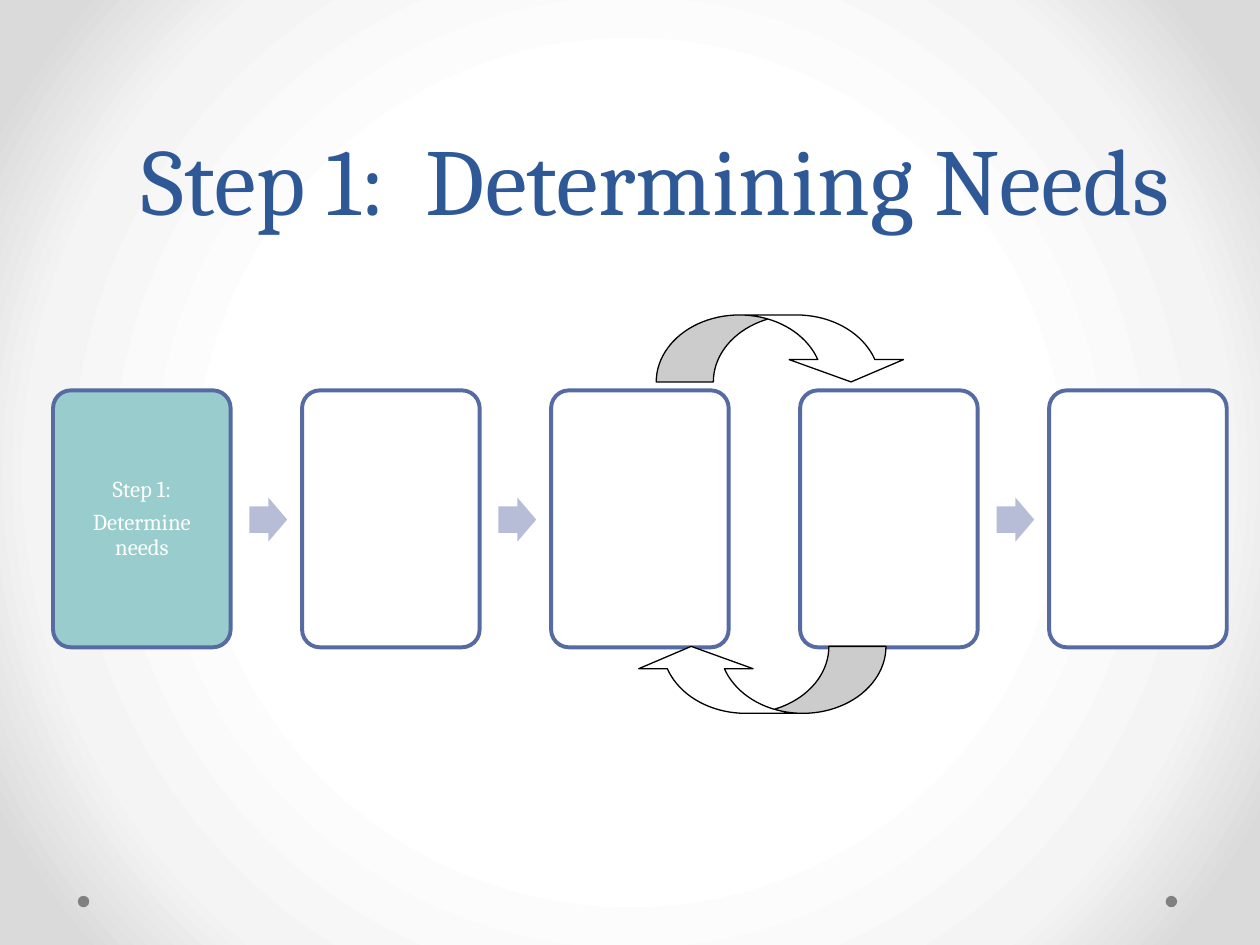
"""Build the Step 1 slide: a five-box process with a loop between boxes three and four."""
from dataclasses import dataclass

from pptx import Presentation
from pptx.dml.color import RGBColor
from pptx.enum.shapes import MSO_SHAPE
from pptx.enum.text import MSO_ANCHOR, PP_ALIGN
from pptx.oxml import parse_xml
from pptx.util import Cm, Pt

OVAL = MSO_SHAPE.OVAL
BOX = MSO_SHAPE.ROUNDED_RECTANGLE
ARROW = MSO_SHAPE.RIGHT_ARROW
CURVED_ARROW = MSO_SHAPE.CURVED_DOWN_ARROW
CENTER = PP_ALIGN.CENTER
BOTTOM = MSO_ANCHOR.BOTTOM
MIDDLE = MSO_ANCHOR.MIDDLE
DRAWING_NS = "http://schemas.openxmlformats.org/drawingml/2006/main"


@dataclass(frozen=True)
class Theme:
    font: str = "Cambria"
    title_size: float = 54
    title_leading: float = 58
    label_size: float = 13
    label_gap: float = 5
    box_line: float = 2.25
    loop_line: float = 0.75
    title: str = "2F5897"
    label: str = "FFFFFF"
    active: str = "99CCCC"
    plain: str = "FFFFFF"
    border: str = "576BA3"
    arrow: str = "B7BDD6"
    loop_border: str = "000000"
    dot: str = "808080"
    glow: tuple = ((50, "FFFFFF"), (76, "F4F4F4"), (92, "DADADA"))


THEME = Theme()


def rgb(value):
    return RGBColor.from_string(value)


def set_background(s):
    s.background.fill.solid()
    bg = s._element.xpath(".//p:bgPr")[0]
    stops = "".join(
        f'<a:gs pos="{pos * 1000}"><a:srgbClr val="{color}"/></a:gs>'
        for pos, color in THEME.glow
    )
    bg[0] = parse_xml(
        f'<a:gradFill xmlns:a="{DRAWING_NS}" rotWithShape="1">'
        f'<a:gsLst>{stops}</a:gsLst><a:path path="circle">'
        '<a:fillToRect l="50000" t="50000" r="50000" b="50000"/>'
        "</a:path></a:gradFill>"
    )


def add_shape(s, kind, at, fill, line=None, width=0, adjust=()):
    sp = s.shapes.add_shape(kind, *map(Cm, at))
    sp.shadow.inherit = False
    sp.fill.solid()
    sp.fill.fore_color.rgb = rgb(fill)
    if line:
        sp.line.color.rgb = rgb(line)
        sp.line.width = Pt(width)
    else:
        sp.line.fill.background()
    for i, value in enumerate(adjust):
        sp.adjustments[i] = value
    return sp


def style_paragraph(p, size, color, spacing):
    p.alignment = CENTER
    p.line_spacing = spacing
    p.font.name = THEME.font
    p.font.size = Pt(size)
    p.font.color.rgb = rgb(color)


def add_title(s, text):
    tf = s.shapes.add_textbox(Cm(2.54), Cm(0.84), Cm(21.36), Cm(4.01)).text_frame
    tf.word_wrap = True
    tf.vertical_anchor = BOTTOM
    tf.text = text
    style_paragraph(tf.paragraphs[0], THEME.title_size, THEME.title,
                    Pt(THEME.title_leading))


def add_label(sp, lines):
    tf = sp.text_frame
    tf.word_wrap = True
    tf.vertical_anchor = MIDDLE
    tf.margin_left = tf.margin_right = tf.margin_top = tf.margin_bottom = Cm(0.13)
    tf.text = "\n".join(lines)
    for p in tf.paragraphs:
        style_paragraph(p, THEME.label_size, THEME.label, 0.9)
        p.space_after = Pt(THEME.label_gap)


def add_process(s, labels, arrows_after):
    left, pitch = 1.07, 5.02
    for i, lines in enumerate(labels):
        x = left + i * pitch
        sp = add_shape(s, BOX, (x, 7.87, 3.58, 5.18),
                       THEME.active if lines else THEME.plain,
                       THEME.border, THEME.box_line, (0.1,))
        if lines:
            add_label(sp, lines)
        if i in arrows_after:
            add_shape(s, ARROW, (x + 3.96, 10.03, 0.76, 0.89), THEME.arrow,
                      adjust=(0.6, 0.5))


def add_loop_arrow(s, left, top, rotation):
    sp = add_shape(s, CURVED_ARROW, (left, top, 5.08, 1.35), THEME.plain,
                   THEME.loop_border, THEME.loop_line, (0.853, 1.707, 0.333))
    sp.rotation = rotation


def main():
    prs = Presentation()
    prs.slide_width, prs.slide_height = Cm(25.4), Cm(19.05)
    s = prs.slides.add_slide(prs.slide_layouts[6])
    set_background(s)
    for left in (23.5, 1.57):
        add_shape(s, OVAL, (left, 18.06, 0.23, 0.23), THEME.dot)
    add_title(s, "Step 1:  Determining Needs")
    add_process(s, [("Step 1:", "Determine needs"), (), (), (), ()], {0, 1, 3})
    add_loop_arrow(s, 13.23, 6.35, 0)
    add_loop_arrow(s, 12.78, 13.03, 180)
    prs.save("out.pptx")


if __name__ == "__main__":
    main()
